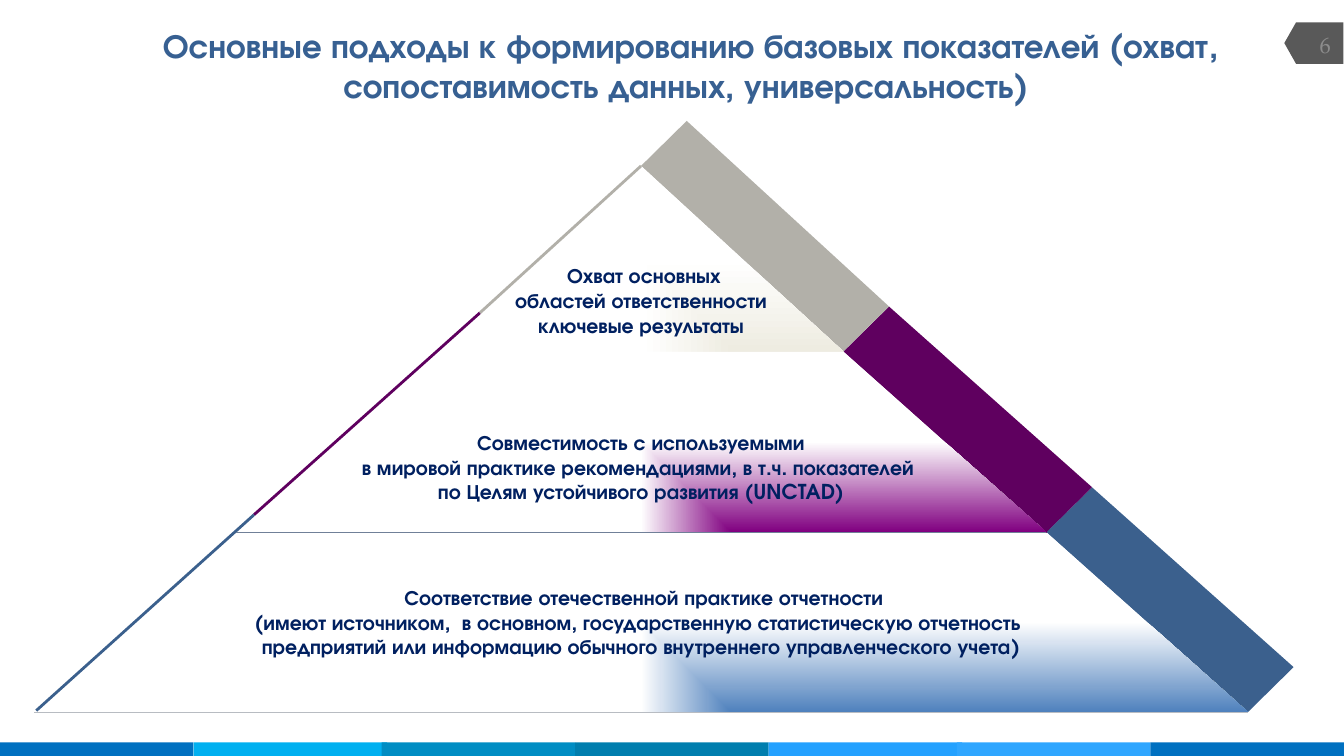
from itertools import pairwise

from lxml.etree import SubElement
from pptx import Presentation
from pptx.dml.color import RGBColor
from pptx.enum.shapes import MSO_CONNECTOR, MSO_SHAPE
from pptx.enum.text import MSO_ANCHOR, PP_ALIGN
from pptx.oxml.ns import qn
from pptx.util import Inches, Pt

WIDTH = 10
HEIGHT = WIDTH * 9 / 16
SANS, SERIF = "TeX Gyre Adventor", "TeX Gyre Pagella"

WHITE = RGBColor(0xFF, 0xFF, 0xFF)
TITLE_BLUE = RGBColor(0x37, 0x60, 0x92)
NAVY = RGBColor(0x00, 0x20, 0x60)
MARKER_GRAY = RGBColor(0x59, 0x59, 0x59)
NUMBER_GRAY = RGBColor(0x8C, 0x8C, 0x8C)
BASE_GRAY = RGBColor(0xB8, 0xBC, 0xC2)
BASE_SLATE = RGBColor(0x70, 0x80, 0x98)
IVORY = RGBColor(0xEE, 0xEC, 0xE1)
STONE = RGBColor(0xB2, 0xB0, 0xA9)
PURPLE = RGBColor(0x80, 0x00, 0x80)
DARK_PURPLE = RGBColor(0x5F, 0x00, 0x5F)
BLUE = RGBColor(0x4F, 0x81, 0xBD)
DARK_BLUE = RGBColor(0x3B, 0x60, 0x8D)

# Left edge of each footer bar, in percent of the slide width
FOOTER_BARS = [
    (0, RGBColor(0x00, 0x70, 0xC0)),
    (14.4, RGBColor(0x00, 0xB0, 0xF0)),
    (28.4, RGBColor(0x00, 0x8D, 0xC3)),
    (42.8, RGBColor(0x00, 0x7E, 0xAE)),
    (57.2, RGBColor(0x23, 0xA1, 0xFF)),
    (71.2, RGBColor(0x2F, 0xA6, 0xFF)),
    (85.6, RGBColor(0x00, 0x70, 0xC0)),
]

# Pyramid geometry in percent of the slide: height of a level, half its width
AXIS = 47.7
LEVELS = [(21.95, 0), (46.5, 15.05), (70.4, 30.15), (94.2, 45.15)]
DEPTH_X, DEPTH_Y = 3.4, -5.95

# Lines of text, front colour, side colour, space above the text
TIERS = [
    ([" Охват основных", " областей ответственности ", "ключевые результаты"],
     IVORY, STONE, 11),
    ([" Совместимость с используемыми ",
      "в мировой практике рекомендациями, в т.ч. показателей ",
      "по Целям устойчивого развития (UNCTAD)"],
     PURPLE, DARK_PURPLE, 6.6),
    ([" Соответствие отечественной практике отчетности",
      "(имеют источником,  в основном, государственную статистическую отчетность ",
      "предприятий или информацию обычного внутреннего управленческого учета)"],
     BLUE, DARK_BLUE, 0),
]
# Points where the colour of the left edge changes
LEFT_EDGE = [(47.7, 21.95), (35.7, 41.4), (18.9, 68.1), (2.7, 94)]


def across(percent):
    return Inches(WIDTH * percent / 100)


def down(percent):
    return Inches(HEIGHT * percent / 100)


def write(shape, lines, *, size, color, font=SANS, bold=False,
          align=PP_ALIGN.CENTER, anchor=MSO_ANCHOR.TOP, wrap=True):
    frame = shape.text_frame
    frame.word_wrap = wrap
    frame.vertical_anchor = anchor
    for index, line in enumerate(lines):
        para = frame.paragraphs[0] if index == 0 else frame.add_paragraph()
        para.alignment = align
        span = para.add_run()
        span.text = line
        span.font.name = font
        span.font.size = Pt(size)
        span.font.bold = bold
        span.font.color.rgb = color


def add_box(page, left, top, width, height):
    return page.shapes.add_textbox(
        across(left), down(top), across(width), down(height))


def paint(shape, color):
    shape.shadow.inherit = False
    shape.fill.solid()
    shape.fill.fore_color.rgb = color
    shape.line.fill.background()


def paint_corner_gradient(shape, color):
    """Fade from a colour in the bottom right corner to white."""
    shape.shadow.inherit = False
    shape.line.fill.background()
    shape.fill.gradient()
    for stop, stop_color in zip(shape.fill.gradient_stops, (color, WHITE)):
        stop.color.rgb = stop_color
    gradient = shape._element.spPr.find(qn("a:gradFill"))
    gradient.remove(gradient.find(qn("a:lin")))
    route = SubElement(gradient, qn("a:path"), path="rect")
    SubElement(route, qn("a:fillToRect"), l="100000", t="100000")


def add_polygon(page, points):
    start, *others = [(across(x), down(y)) for x, y in points]
    builder = page.shapes.build_freeform(*start)
    builder.add_line_segments(others, close=True)
    return builder.convert_to_shape()


def add_line(page, start, end, color, width):
    line = page.shapes.add_connector(
        MSO_CONNECTOR.STRAIGHT,
        across(start[0]), down(start[1]), across(end[0]), down(end[1]))
    line.line.color.rgb = color
    line.line.width = Pt(width)
    SubElement(line._element.spPr, qn("a:effectLst"))


def add_tier(page, upper, lower, tier):
    lines, front_color, side_color, space_above = tier
    (top, top_half), (bottom, bottom_half) = upper, lower
    top_right, bottom_right = AXIS + top_half, AXIS + bottom_half

    side = add_polygon(page, [
        (top_right, top), (top_right + DEPTH_X, top + DEPTH_Y),
        (bottom_right + DEPTH_X, bottom + DEPTH_Y), (bottom_right, bottom)])
    paint(side, side_color)

    front = add_polygon(page, [
        (AXIS - bottom_half, bottom), (AXIS - top_half, top),
        (top_right, top), (bottom_right, bottom)])
    paint_corner_gradient(front, front_color)
    frame = front.text_frame
    frame.margin_left = frame.margin_right = frame.margin_bottom = 0
    frame.margin_top = down(space_above)
    write(front, lines, size=11, color=NAVY, bold=True,
          anchor=MSO_ANCHOR.MIDDLE, wrap=False)


def add_pyramid(page):
    for (upper, lower), tier in reversed(list(zip(pairwise(LEVELS), TIERS))):
        add_tier(page, upper, lower, tier)
    for (start, end), tier in zip(pairwise(LEFT_EDGE), TIERS):
        add_line(page, start, end, tier[2], 1.5)
    for (level, half), color in zip(LEVELS[2:], (BASE_SLATE, BASE_GRAY)):
        add_line(page, (AXIS - half, level), (AXIS + half, level), color, 0.5)


def add_page_number(page):
    marker = page.shapes.add_shape(
        MSO_SHAPE.FLOWCHART_OFFPAGE_CONNECTOR,
        across(96.2), down(1.8), across(3.1), down(7.8))
    marker.rotation = 90
    paint(marker, MARKER_GRAY)
    write(add_box(page, 95.6, 3.2, 4.4, 5.3), ["6"], size=12, font=SERIF,
          color=NUMBER_GRAY, align=PP_ALIGN.RIGHT, anchor=MSO_ANCHOR.MIDDLE)


def add_footer(page):
    for left, color in FOOTER_BARS:
        bar = page.shapes.add_shape(
            MSO_SHAPE.RECTANGLE,
            across(left), down(98.2), across(14.4), down(1.8))
        paint(bar, color)


def main():
    deck = Presentation()
    deck.slide_width, deck.slide_height = Inches(WIDTH), Inches(HEIGHT)
    page = deck.slides.add_slide(deck.slide_layouts[6])
    add_page_number(page)
    write(add_box(page, 7.2, 2.4, 88.4, 12.5),
          ["Основные подходы к формированию базовых показателей "
           "(охват, сопоставимость данных, универсальность) "],
          size=18, color=TITLE_BLUE, bold=True)
    add_footer(page)
    add_pyramid(page)
    deck.save("out.pptx")


if __name__ == "__main__":
    main()
